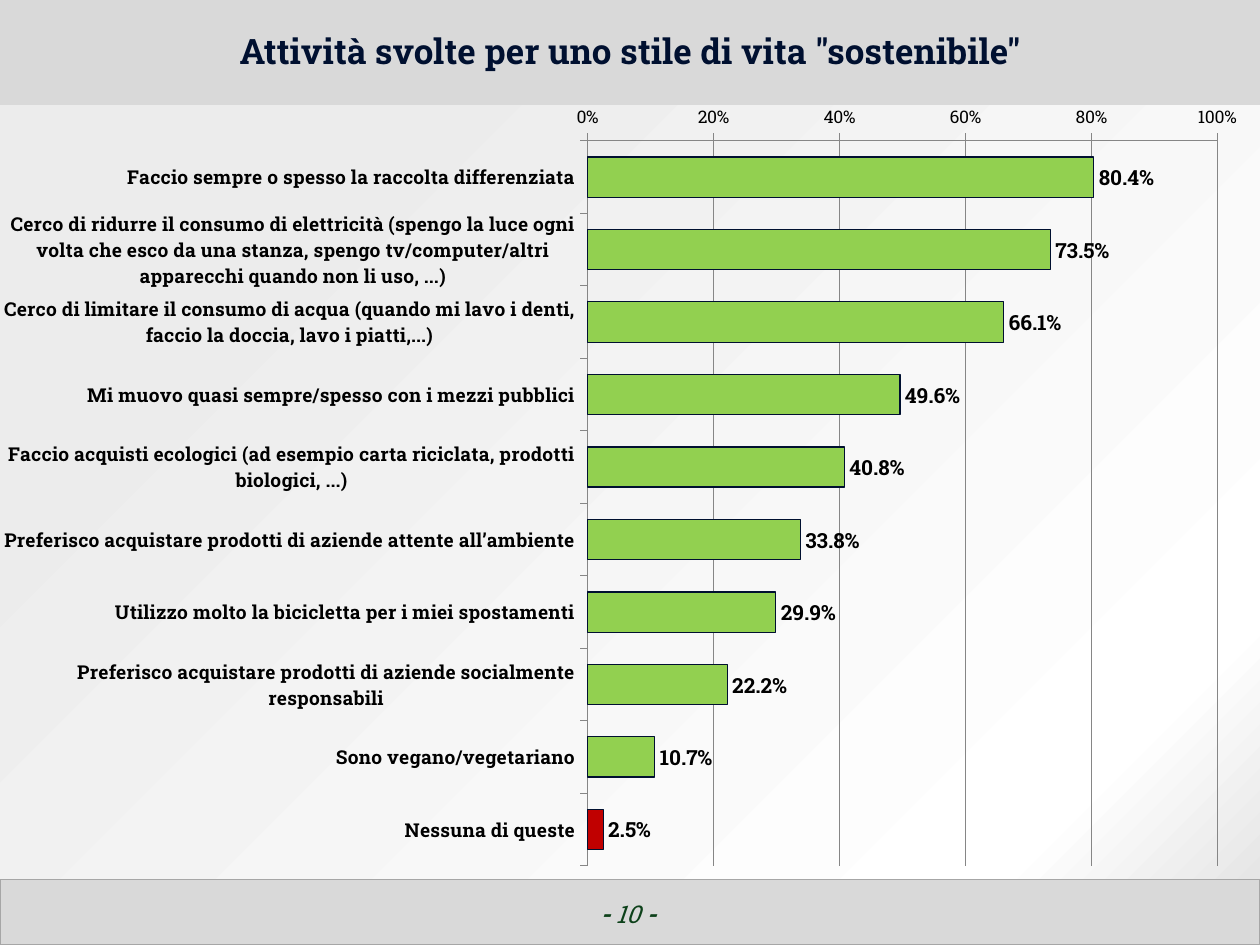
from dataclasses import dataclass

from lxml import etree
from pptx import Presentation
from pptx import util as u
from pptx.chart import data as chart_data
from pptx.dml import color
from pptx.enum import chart as charts
from pptx.enum import shapes, text
from pptx.oxml import ns, parse_xml

PX = 914400 / 126


@dataclass(frozen=True)
class Theme:
    face: str = "Roboto Slab"
    band: str = "D9D9D9"
    edge: str = "A6A6A6"
    title: str = "001030"
    number: str = "0D411A"
    ink: str = "000000"
    grid: str = "868686"
    bar: str = "92D050"
    none_bar: str = "C00000"
    glow: tuple = ((0, "E6E6E6"), (13, "FFFFFF"), (82, "ECECEC"))
    title_size: int = 20
    number_size: int = 14
    value_size: int = 12
    category_size: int = 11
    axis_size: int = 10


THEME = Theme()

ACTIVITIES = {
    "Faccio sempre o spesso la raccolta differenziata": 0.804,
    "Cerco di ridurre il consumo di elettricità (spengo la luce ogni volta che esco "
    "da una stanza, spengo tv/computer/altri apparecchi quando non li uso, ...)": 0.735,
    "Cerco di limitare il consumo di acqua (quando mi lavo i denti, faccio la doccia, "
    "lavo i piatti,...)": 0.661,
    "Mi muovo quasi sempre/spesso con i mezzi pubblici": 0.496,
    "Faccio acquisti ecologici (ad esempio carta riciclata, prodotti biologici, ...)": 0.408,
    "Preferisco acquistare prodotti di aziende attente all’ambiente": 0.338,
    "Utilizzo molto la bicicletta per i miei spostamenti": 0.299,
    "Preferisco acquistare prodotti di aziende socialmente responsabili": 0.222,
    "Sono vegano/vegetariano": 0.107,
    "Nessuna di queste": 0.025,
}


def emu(*lengths):
    return [u.Emu(round(length * PX)) for length in lengths]


def rgb(value):
    return color.RGBColor.from_string(value)


def set_all(target, **values):
    for name, value in values.items():
        setattr(target, name, value)


def set_font(font, size, ink, **values):
    set_all(font, name=THEME.face, size=u.Pt(size), **values)
    font.color.rgb = rgb(ink)


def set_line(line, ink, width=0.75):
    line.color.rgb = rgb(ink)
    line.width = u.Pt(width)


def add_panel(page, box, edge=None):
    panel = page.shapes.add_shape(shapes.MSO_SHAPE.RECTANGLE, *emu(*box))
    panel.shadow.inherit = False
    panel.fill.solid()
    panel.fill.fore_color.rgb = rgb(THEME.band)
    if edge:
        set_line(panel.line, edge)
    else:
        panel.line.fill.background()
    return panel


def add_glow(panel):
    stops = "".join(
        f'<a:gs pos="{place * 1000}"><a:srgbClr val="{ink}"/></a:gs>'
        for place, ink in THEME.glow
    )
    gradient = parse_xml(
        f'<a:gradFill {ns.nsdecls("a")} rotWithShape="1"><a:gsLst>{stops}</a:gsLst>'
        '<a:path path="circle"><a:fillToRect l="100000" t="100000"/></a:path></a:gradFill>'
    )
    solid = panel.element.spPr.find(ns.qn("a:solidFill"))
    solid.getparent().replace(solid, gradient)


def add_header(page, box):
    left, top, width, height = box
    add_panel(page, box)
    title = page.shapes.title
    title.element.getparent().append(title.element)
    places = emu(left + 20, top + 4, width - 39, height - 6)
    set_all(title, **dict(zip(("left", "top", "width", "height"), places)))
    frame = title.text_frame
    set_all(frame, word_wrap=True, vertical_anchor=text.MSO_ANCHOR.MIDDLE,
            auto_size=text.MSO_AUTO_SIZE.NONE)
    para = frame.paragraphs[0]
    set_all(para, alignment=text.PP_ALIGN.CENTER, line_spacing=u.Pt(20))
    span = para.add_run()
    span.text = 'Attività svolte per uno stile di vita "sostenibile"'
    set_font(span.font, THEME.title_size, THEME.title, bold=True)


def add_footer(page, box):
    left, top, width, height = box
    add_panel(page, box, THEME.edge)
    number = page.shapes.add_textbox(*emu(left + 481, top + 14, 294, height))
    number.text_frame.word_wrap = True
    para = number.text_frame.paragraphs[0]
    para.alignment = text.PP_ALIGN.CENTER
    for words, bold in (("- ", True), ("10 ", False), ("-", True)):
        span = para.add_run()
        span.text = words
        set_font(span.font, THEME.number_size, THEME.number, bold=bold, italic=True)


def set_plot_area(chart, **fractions):
    area = chart.element.chart.plotArea
    for old in area.findall(ns.qn("c:layout")):
        area.remove(old)
    layout = etree.Element(ns.qn("c:layout"))
    manual = etree.SubElement(layout, ns.qn("c:manualLayout"))
    values = dict(layoutTarget="inner", xMode="edge", yMode="edge", **fractions)
    for name, value in values.items():
        etree.SubElement(manual, ns.qn(f"c:{name}")).set("val", str(value))
    area.insert(0, layout)


def format_axes(chart):
    categories, values = chart.category_axis, chart.value_axis
    categories.reverse_order = True
    set_all(values, minimum_scale=0, maximum_scale=1, major_unit=0.2,
            has_major_gridlines=True)
    set_all(values.tick_labels, number_format="0%", number_format_is_linked=False)
    set_line(values.major_gridlines.format.line, THEME.grid)
    for axis, size, bold in ((categories, THEME.category_size, True),
                             (values, THEME.axis_size, False)):
        axis.major_tick_mark = charts.XL_TICK_MARK.OUTSIDE
        set_line(axis.format.line, THEME.grid)
        set_font(axis.tick_labels.font, size, THEME.ink, bold=bold)


def format_bars(plot):
    set_all(plot, gap_width=80, vary_by_categories=False, has_data_labels=True)
    set_all(plot.data_labels, show_value=True, number_format="0.0%",
            number_format_is_linked=False,
            position=charts.XL_LABEL_POSITION.OUTSIDE_END)
    set_font(plot.data_labels.font, THEME.value_size, THEME.ink, bold=True)
    series = plot.series[0]
    series.invert_if_negative = False
    last = series.points[len(ACTIVITIES) - 1]
    for part, ink in ((series, THEME.bar), (last, THEME.none_bar)):
        part.format.fill.solid()
        part.format.fill.fore_color.rgb = rgb(ink)
        set_line(part.format.line, THEME.title)


def add_activity_chart(page, box):
    left, top, width, height = box
    add_glow(add_panel(page, box))
    data = chart_data.CategoryChartData(number_format="0.0%")
    data.categories = list(ACTIVITIES)
    data.add_series("Series 1", list(ACTIVITIES.values()))
    chart = page.shapes.add_chart(
        charts.XL_CHART_TYPE.BAR_CLUSTERED, *emu(left + 4, top, width - 4, height), data
    ).chart
    set_all(chart, has_legend=False, has_title=False)
    set_font(chart.font, THEME.axis_size, THEME.ink)
    set_plot_area(chart, x=0.464, y=0.039, w=0.502, h=0.944)
    format_axes(chart)
    format_bars(chart.plots[0])


def main():
    deck = Presentation()
    deck.slide_width, deck.slide_height = emu(1260, 945)
    page = deck.slides.add_slide(deck.slide_layouts[5])
    add_header(page, (0, 0, 1260, 106))
    add_footer(page, (0, 879, 1260, 66))
    add_activity_chart(page, (0, 105, 1260, 774))
    deck.save("out.pptx")


if __name__ == "__main__":
    main()
